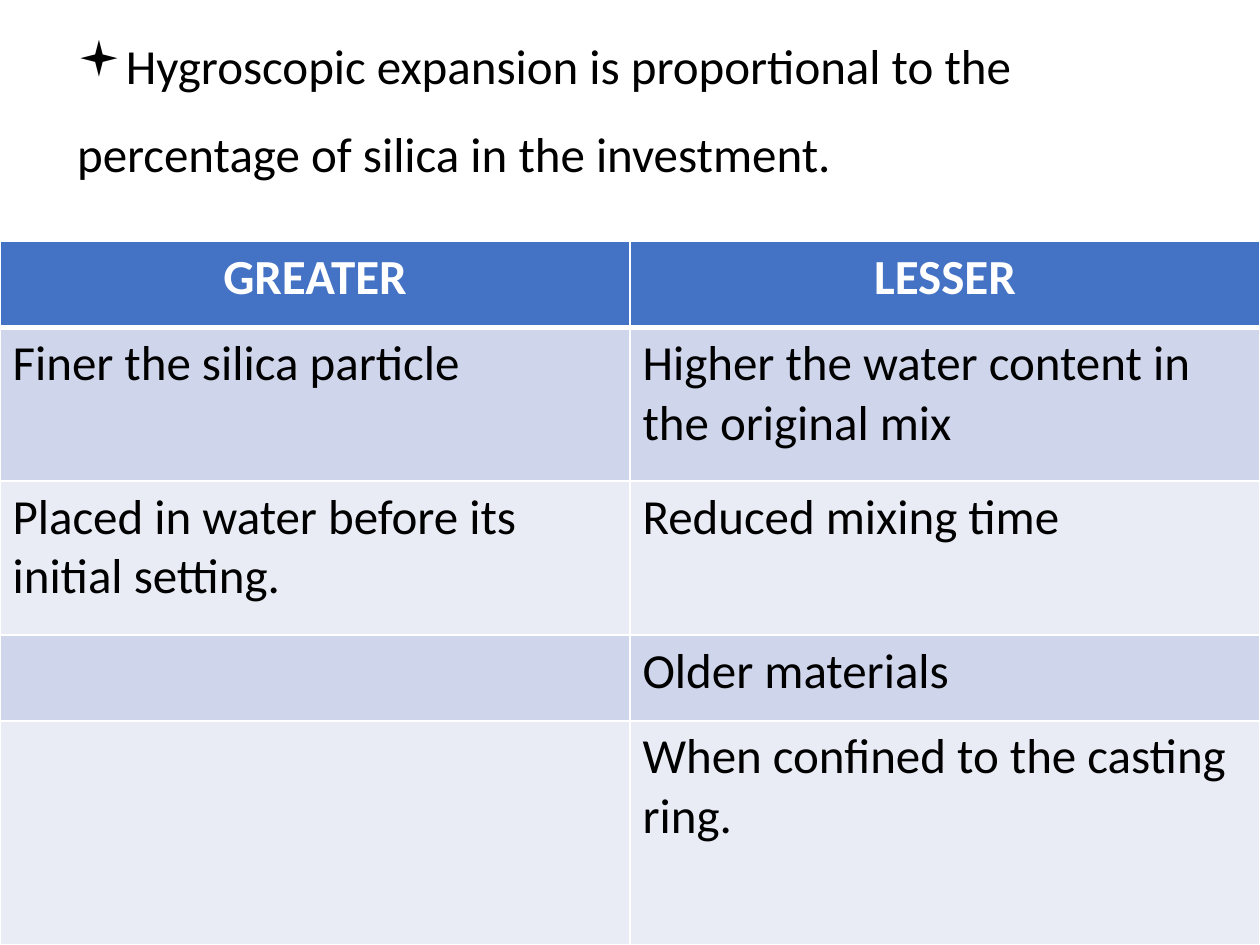
from lxml import etree
from pptx import Presentation
from pptx.dml.color import RGBColor
from pptx.enum.text import PP_ALIGN
from pptx.oxml.ns import qn
from pptx.util import Pt

LEFT, CENTER = PP_ALIGN.LEFT, PP_ALIGN.CENTER
FONT = "Calibri"
COLORS = {
    "ink": "000000",
    "white": "FFFFFF",
    "head": "4472C4",
    "odd": "CFD5EA",
    "even": "E9EBF5",
}
CLAIM = "Hygroscopic expansion is proportional to the percentage of silica in the investment."
ROWS = [
    (49, "GREATER", "LESSER"),
    (88, "Finer the silica particle", "Higher the water content in the original mix"),
    (88, "Placed in water before its initial setting.", "Reduced mixing time"),
    (49, "", "Older materials"),
    (128, "", "When confined to the casting ring."),
]


def write(frame, text, size=28, color="ink", bold=False, align=LEFT,
          space=None, before=None, bullet=None):
    frame.word_wrap = True
    para = frame.paragraphs[0]
    para.alignment = align
    if space:
        para.line_spacing = space
    if before:
        para.space_before = Pt(before)
    if bullet:
        props = para._p.get_or_add_pPr()
        props.set("marL", "0")
        props.set("indent", "0")
        etree.SubElement(props, qn("a:buFont"), typeface="Wingdings")
        etree.SubElement(props, qn("a:buChar"), char=bullet)
    run = para.add_run()
    run.text = text
    font = run.font
    font.name, font.size, font.bold = FONT, Pt(size), bold
    font.color.rgb = RGBColor.from_string(COLORS[color])


def edge(cell, side, width):
    line = etree.SubElement(cell._tc.get_or_add_tcPr(), qn(f"a:ln{side}"),
                            w=str(int(Pt(width))))
    fill = etree.SubElement(line, qn("a:solidFill"))
    etree.SubElement(fill, qn("a:srgbClr"), val=COLORS["white"])


def add_claim(slide, x, y, w, h):
    box = slide.shapes.add_textbox(Pt(x), Pt(y), Pt(w), Pt(h))
    write(box.text_frame, CLAIM, space=1.5, before=7.5, bullet="▪")


def add_grid(slide, x, y, w, h):
    count = len(ROWS[0]) - 1
    table = slide.shapes.add_table(len(ROWS), count, Pt(x), Pt(y), Pt(w), Pt(h)).table
    for col in table.columns:
        col.width = Pt(w / count)
    for i, (tall, *texts) in enumerate(ROWS):
        table.rows[i].height = Pt(tall)
        head = i == 0
        tone = "head" if head else ("even", "odd")[i % 2]
        for j, text in enumerate(texts):
            cell = table.cell(i, j)
            for side in "LRTB":
                thick = (i, side) in ((0, "B"), (1, "T"))
                edge(cell, side, 3 if thick else 1)
            cell.fill.solid()
            cell.fill.fore_color.rgb = RGBColor.from_string(COLORS[tone])
            if text:
                write(cell.text_frame, text, bold=head,
                      color="white" if head else "ink",
                      align=CENTER if head else LEFT)


def main():
    deck = Presentation()
    deck.slide_width, deck.slide_height = Pt(720), Pt(540)
    slide = deck.slides.add_slide(deck.slide_layouts[6])
    add_claim(slide, 37, 0, 623, 516)
    add_grid(slide, 0, 138, 720, sum(row[0] for row in ROWS))
    deck.save("out.pptx")


if __name__ == "__main__":
    main()
